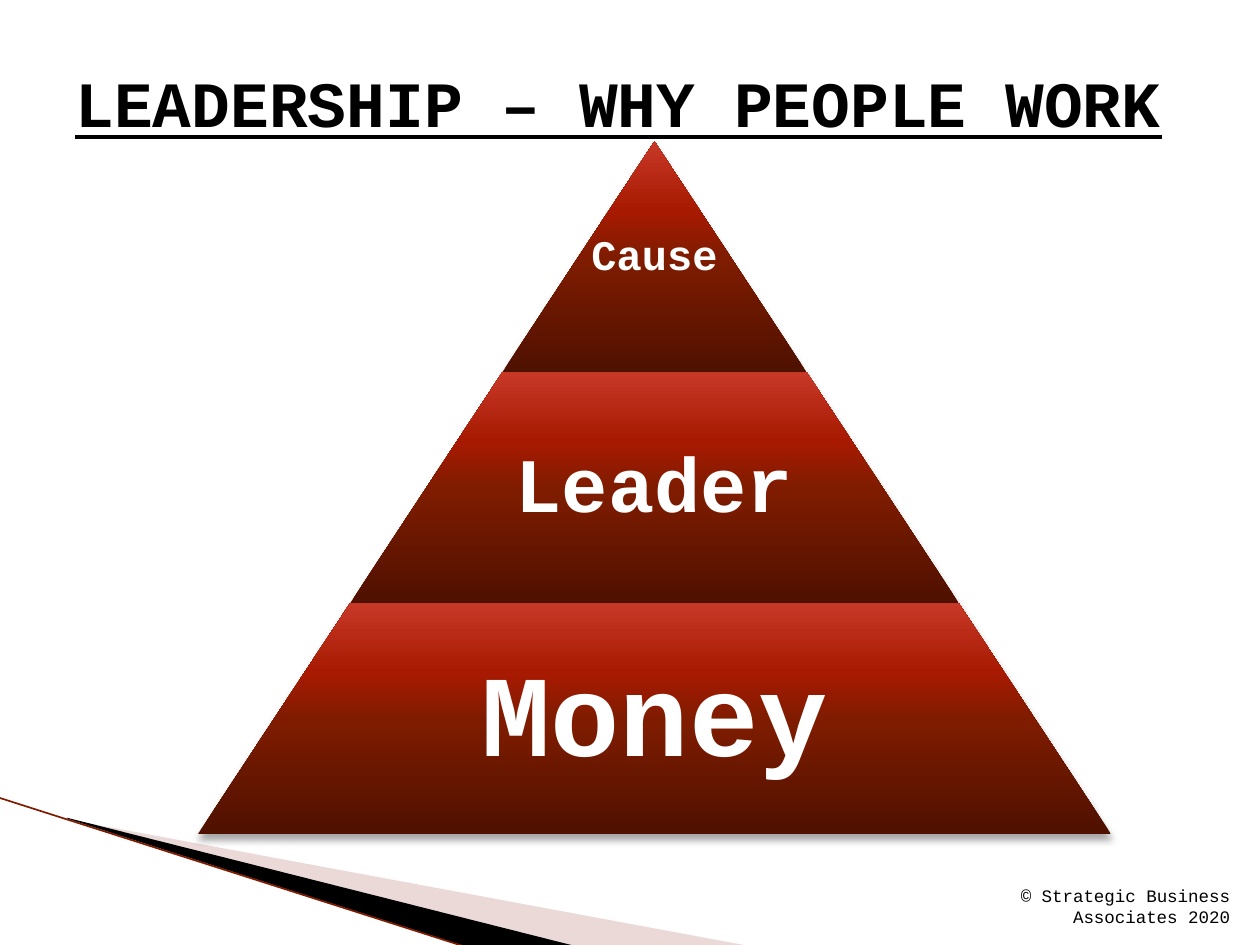
from lxml import etree
from pptx import Presentation
from pptx.dml.color import RGBColor
from pptx.enum.shapes import MSO_CONNECTOR, MSO_SHAPE
from pptx.enum.text import MSO_ANCHOR, PP_ALIGN
from pptx.oxml.ns import qn
from pptx.util import Pt

TRAPEZOID = MSO_SHAPE.TRAPEZOID
STRAIGHT = MSO_CONNECTOR.STRAIGHT
LEFT, CENTER, RIGHT = PP_ALIGN.LEFT, PP_ALIGN.CENTER, PP_ALIGN.RIGHT
MIDDLE, BOTTOM = MSO_ANCHOR.MIDDLE, MSO_ANCHOR.BOTTOM

COLOURS = {
    "black": "000000",
    "white": "FFFFFF",
    "blush": "CEA29F",
    "rust": "7F1C00",
}
TIER_GRADIENT = [(0, "4F1100"), (50, "7F1C00"), (70, "A71A01"), (100, "C73827")]
TIERS = [("Cause", 24, 1, 2), ("Leader", 44, 0.65, 4), ("Money", 66, 0.65, 6.5)]
TIER_HEIGHT = 132
TIER_STEP = 87
PYRAMID_CENTER = 374
PYRAMID_TOP = 80.8


def colour(name):
    return RGBColor.from_string(COLOURS[name])


def add_element(parent, tag, **attributes):
    values = {key: str(value) for key, value in attributes.items()}
    return etree.SubElement(parent, qn(tag), values)


def write_text(frame, text, font="Courier New", size=10, fill="black", bold=False,
               underline=False, align=LEFT, spacing=1.0):
    para = frame.paragraphs[0]
    para.alignment = align
    para.line_spacing = spacing
    span = para.add_run()
    span.text = text
    span.font.name = font
    span.font.size = Pt(size)
    span.font.bold = bold
    span.font.underline = underline
    span.font.color.rgb = colour(fill)


class SlideBuilder:
    def __init__(self, page):
        self.page = page
        self.shapes = page.shapes

    def text(self, left, top, width, height, text, anchor=MIDDLE, insets=None, **style):
        box = self.shapes.add_textbox(Pt(left), Pt(top), Pt(width), Pt(height))
        frame = box.text_frame
        frame.word_wrap = True
        frame.vertical_anchor = anchor
        if insets is not None:
            frame.margin_left = frame.margin_right = Pt(insets)
            frame.margin_top = frame.margin_bottom = Pt(insets)
        write_text(frame, text, **style)

    def polygon(self, points, fill, opacity=100):
        start, *others = [(Pt(x), Pt(y)) for x, y in points]
        builder = self.shapes.build_freeform(*start)
        builder.add_line_segments(others, close=True)
        shape = builder.convert_to_shape()
        shape.shadow.inherit = False
        shape.line.fill.background()
        shape.fill.solid()
        shape.fill.fore_color.rgb = colour(fill)
        if opacity < 100:
            tint = shape._element.spPr.find(".//" + qn("a:srgbClr"))
            add_element(tint, "a:alpha", val=opacity * 1000)

    def line(self, start, end, stroke, width):
        x1, y1, x2, y2 = [Pt(value) for value in (*start, *end)]
        connector = self.shapes.add_connector(STRAIGHT, x1, y1, x2, y2)
        connector.line.color.rgb = colour(stroke)
        connector.line.width = Pt(width)
        add_element(connector._element.spPr, "a:effectLst")

    def trapezoid(self, left, top, width, height, slant):
        shape = self.shapes.add_shape(TRAPEZOID, Pt(left), Pt(top), Pt(width), Pt(height))
        shape.adjustments[0] = slant / height
        shape.line.fill.background()
        shape.fill.gradient()
        shape.fill.gradient_angle = 90
        properties = shape._element.spPr
        stops = properties.find(".//" + qn("a:gsLst"))
        for stop in list(stops):
            stops.remove(stop)
        for position, shade in TIER_GRADIENT:
            stop = add_element(stops, "a:gs", pos=position * 1000)
            add_element(stop, "a:srgbClr", val=shade)
        shape.shadow.inherit = False
        effects = properties.find(qn("a:effectLst"))
        shadow = add_element(effects, "a:outerShdw", blurRad=Pt(4), dist=Pt(3),
                             dir=5400000, rotWithShape=0)
        shadow_colour = add_element(shadow, "a:srgbClr", val=COLOURS["black"])
        add_element(shadow_colour, "a:alpha", val=35000)


def main():
    deck = Presentation()
    deck.slide_width, deck.slide_height = Pt(720), Pt(540)
    slide = SlideBuilder(deck.slides.add_slide(deck.slide_layouts[6]))

    slide.polygon([(39.6, 468.4), (428.4, 540.6), (328.3, 540.6), (39.6, 468)],
                  "blush", opacity=40)
    slide.polygon([(38.2, 467.3), (329, 540.7), (267.8, 541.4), (38.9, 468)], "black")
    slide.line((-0.7, 455.8), (267.1, 541.4), "rust", 0.95)

    slide.text(36, 13, 648, 90, "LEADERSHIP – WHY PEOPLE WORK",
               size=36.9, bold=True, underline=True)
    slide.text(522, 504.7, 187.9, 28.8, "© Strategic Business Associates 2020",
               anchor=BOTTOM, align=RIGHT)

    for index, (label, size, text_share, insets) in enumerate(TIERS):
        width = 2 * TIER_STEP * (index + 1)
        top = PYRAMID_TOP + TIER_HEIGHT * index
        slide.trapezoid(PYRAMID_CENTER - width / 2, top, width, TIER_HEIGHT, TIER_STEP)
        text_width = width * text_share
        slide.text(PYRAMID_CENTER - text_width / 2, top, text_width, TIER_HEIGHT, label,
                   insets=insets, size=size, fill="white", bold=True,
                   align=CENTER, spacing=0.9)

    deck.save("out.pptx")


if __name__ == "__main__":
    main()
